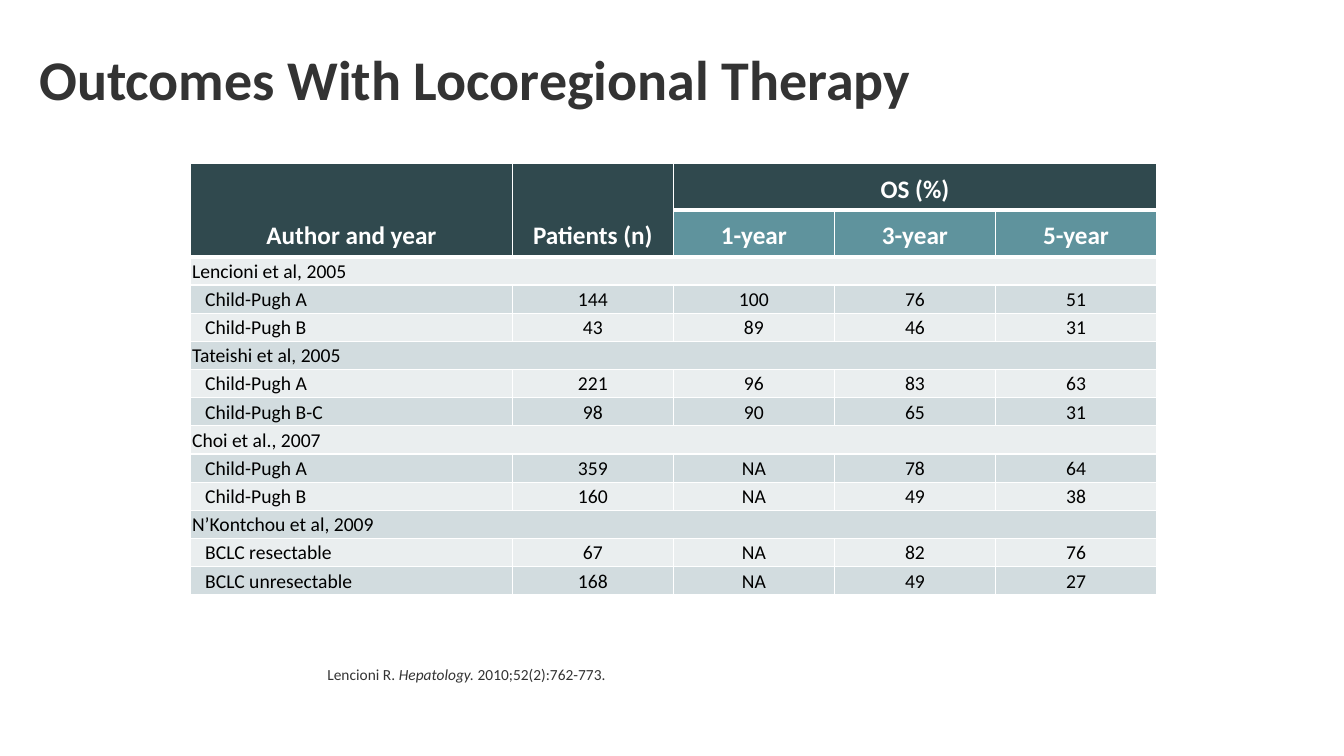
from lxml.etree import SubElement
from pptx import Presentation
from pptx.dml.color import RGBColor
from pptx.enum.text import MSO_ANCHOR, PP_ALIGN
from pptx.oxml.ns import qn
from pptx.util import Cm, Pt

INK = RGBColor(0x33, 0x33, 0x33)
BLACK = RGBColor(0x00, 0x00, 0x00)
WHITE = RGBColor(0xFF, 0xFF, 0xFF)
DARK_TEAL = RGBColor(0x30, 0x49, 0x4E)
MID_TEAL = RGBColor(0x5F, 0x93, 0x9D)
BANDS = (RGBColor(0xEA, 0xEE, 0xEF), RGBColor(0xD2, 0xDC, 0xDF))

ROWS = [
    ("Author and year", "Patients (n)", "OS (%)"),
    ("", "", "1-year", "3-year", "5-year"),
    ("Lencioni et al, 2005",),
    ("Child-Pugh A", "144", "100", "76", "51"),
    ("Child-Pugh B", "43", "89", "46", "31"),
    ("Tateishi et al, 2005",),
    ("Child-Pugh A", "221", "96", "83", "63"),
    ("Child-Pugh B-C", "98", "90", "65", "31"),
    ("Choi et al., 2007",),
    ("Child-Pugh A", "359", "NA", "78", "64"),
    ("Child-Pugh B", "160", "NA", "49", "38"),
    ("N’Kontchou et al, 2009",),
    ("BCLC resectable", "67", "NA", "82", "76"),
    ("BCLC unresectable", "168", "NA", "49", "27"),
]
HEADER_ROWS = 2
COLUMN_WIDTHS = [Cm(8.1)] + [Cm(4.06)] * 4
ROW_HEIGHTS = [Cm(1.17)] * HEADER_ROWS + [Cm(0.71)] * (len(ROWS) - HEADER_ROWS)


def add_text(page, place, spans, look, anchor):
    box = page.shapes.add_textbox(*[Cm(length) for length in place])
    box.text_frame.word_wrap = True
    box.text_frame.vertical_anchor = anchor
    para = box.text_frame.paragraphs[0]
    para.line_spacing = 0.9
    for text, italic in spans:
        span = para.add_run()
        span.text = text
        span.font.color.rgb = INK
        for name, value in {"name": "Calibri", "italic": italic, **look}.items():
            setattr(span.font, name, value)


def add_borders(cell, widths):
    for side, width in widths.items():
        line = SubElement(cell._tc.get_or_add_tcPr(), qn(f"a:ln{side}"), w=str(Pt(width)))
        fill = SubElement(line, qn("a:solidFill"))
        SubElement(fill, qn("a:srgbClr"), val=str(WHITE))


deck = Presentation()
deck.slide_width, deck.slide_height = Cm(33.87), Cm(19.05)
page = deck.slides.add_slide(deck.slide_layouts[6])

# Title
add_text(page, (0.74, 0.48, 32.46, 3.18), [("Outcomes With Locoregional Therapy", False)],
         {"size": Pt(40), "bold": True}, MSO_ANCHOR.MIDDLE)

# Table grid
table = page.shapes.add_table(len(ROWS), len(COLUMN_WIDTHS), Cm(4.81), Cm(4.13),
                              sum(COLUMN_WIDTHS), sum(ROW_HEIGHTS)).table
table.first_row = table.horz_banding = False
for column, width in zip(table.columns, COLUMN_WIDTHS):
    column.width = width
for row, height in zip(table.rows, ROW_HEIGHTS):
    row.height = height

# Merged headings and study rows
for column in (0, 1):
    table.cell(0, column).merge(table.cell(1, column))
table.cell(0, 2).merge(table.cell(0, 4))
for number, values in enumerate(ROWS):
    if len(values) == 1:
        table.cell(number, 0).merge(table.cell(number, 4))

# Cell text, borders and fills
for number, values in enumerate(ROWS):
    is_header = number < HEADER_ROWS
    for column, text in enumerate(values):
        cell = table.cell(number, column)
        if cell.is_spanned:
            continue
        add_borders(cell, {"L": 1, "R": 1, "T": 3 if number in (1, 2) else 1,
                           "B": 3 if is_header else 1})
        cell.fill.solid()
        if is_header:
            cell.fill.fore_color.rgb = (DARK_TEAL, MID_TEAL)[number]
            layout = {"vertical_anchor": MSO_ANCHOR.BOTTOM}
        else:
            cell.fill.fore_color.rgb = BANDS[number % 2]
            is_subgroup = column == 0 and len(values) > 1
            layout = {"vertical_anchor": MSO_ANCHOR.MIDDLE,
                      "margin_left": Cm(0.36 if is_subgroup else 0.03),
                      "margin_right": Cm(0.03), "margin_top": Cm(0.03), "margin_bottom": 0}
        for name, value in layout.items():
            setattr(cell, name, value)
        para = cell.text_frame.paragraphs[0]
        para.alignment = PP_ALIGN.CENTER if is_header or column else PP_ALIGN.LEFT
        span = para.add_run()
        span.text = text
        span.font.color.rgb = WHITE if is_header else BLACK
        look = {"name": "Calibri", "size": Pt(18 if is_header else 14), "bold": is_header}
        for name, value in look.items():
            setattr(span.font, name, value)

# Citation
add_text(page, (8, 16.69, 25.2, 2.03),
         [("Lencioni R. ", False), ("Hepatology. ", True), ("2010;52(2):762-773.", False)],
         {"size": Pt(11)}, MSO_ANCHOR.TOP)

deck.save("out.pptx")
